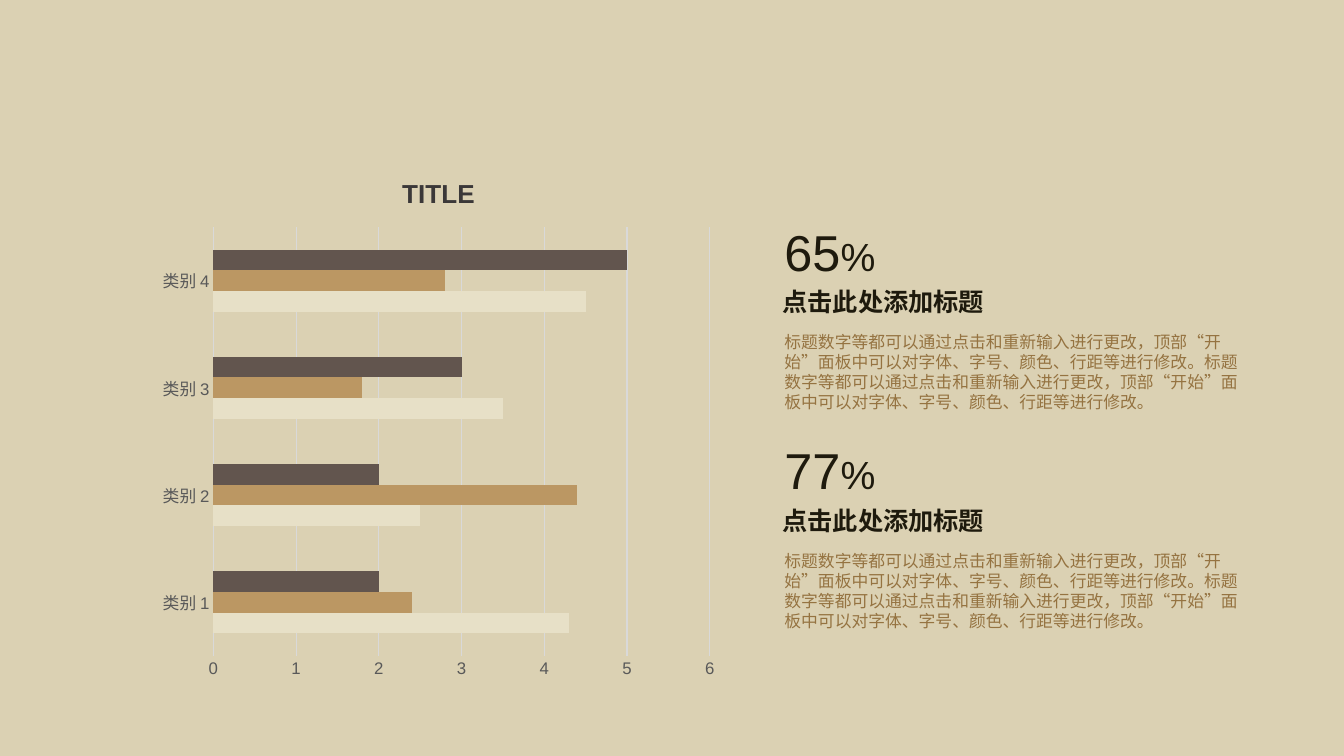
from pptx import Presentation
from pptx.chart.data import CategoryChartData
from pptx.dml.color import RGBColor
from pptx.enum.chart import XL_CHART_TYPE as ChartType, XL_TICK_MARK as TickMark
from pptx.enum.text import MSO_AUTO_SIZE as AutoSize
from pptx.oxml.ns import qn
from pptx.util import Inches, Pt

BACKGROUND, GRID, AXIS_TEXT = "DBD1B3", "D9D9D9", "595959"
CJK = "Noto Sans CJK SC"
NUMBER = {"name": "Arial", "size": Pt(36), "color": "1E1A0D"}
PERCENT = {**NUMBER, "size": Pt(28)}
HEADING = {"name": "Roboto", "size": Pt(18), "color": "1E1A0D", "bold": True}
BODY = {"name": CJK, "size": Pt(12), "color": "957341"}
AXIS = {"name": "Arial", "size": Pt(12), "color": AXIS_TEXT}
CHART_TITLE = {"name": "Arial", "size": Pt(18.6), "color": "3B3838", "bold": True}

CATEGORIES = ["类别 1", "类别 2", "类别 3", "类别 4"]
SERIES = [
    ("Series 1", (4.3, 2.5, 3.5, 4.5), "E7E0C7"),
    ("Series 2", (2.4, 4.4, 1.8, 2.8), "BB9763"),
    ("Series 3", (2, 2, 3, 5), "62554E"),
]
SENTENCE = ("标题数字等都可以通过点击和重新输入进行更改，"
            "顶部“开始”面板中可以对字体、字号、颜色、行距等进行修改。")


def paint(color_format, hex_color):
    color_format.rgb = RGBColor.from_string(hex_color)


def format_font(font, style):
    for attribute, value in style.items():
        if attribute == "color":
            paint(font.color, value)
        else:
            setattr(font, attribute, value)


def add_text(slide, left, top, width, height, runs):
    """Add a one-paragraph text box from (text, style) runs."""
    frame = slide.shapes.add_textbox(*map(Inches, (left, top, width, height))).text_frame
    settings = {
        "word_wrap": True, "auto_size": AutoSize.SHAPE_TO_FIT_TEXT,
        "margin_left": Inches(0.07), "margin_right": Inches(0.07),
        "margin_top": Inches(0.04), "margin_bottom": Inches(0.04),
    }
    for attribute, value in settings.items():
        setattr(frame, attribute, value)
    for text, style in runs:
        run = frame.paragraphs[0].add_run()
        run.text = text
        format_font(run.font, style)
        east_asian = run.font._element.makeelement(qn("a:ea"), {"typeface": CJK})
        run.font._element.find(qn("a:latin")).addnext(east_asian)


def add_bar_chart(slide, left, top, width, height):
    chart_data = CategoryChartData()
    chart_data.categories = CATEGORIES
    for name, values, _ in SERIES:
        chart_data.add_series(name, values)
    chart = slide.shapes.add_chart(
        ChartType.BAR_CLUSTERED, *map(Inches, (left, top, width, height)), chart_data).chart

    format_font(chart.font, {"name": "Arial", "size": Pt(10), "color": "000000"})
    chart.has_legend = False
    chart.has_title = True
    chart.chart_title.include_in_layout = False
    title_run = chart.chart_title.text_frame.paragraphs[0].add_run()
    title_run.text = "TITLE"
    format_font(title_run.font, CHART_TITLE)

    plot = chart.plots[0]
    plot.gap_width = 219
    plot.vary_by_categories = False
    for series, (_, _, color) in zip(plot.series, SERIES):
        series.format.fill.solid()
        paint(series.format.fill.fore_color, color)

    category_axis, value_axis = chart.category_axis, chart.value_axis
    for axis in (category_axis, value_axis):
        axis.major_tick_mark = axis.minor_tick_mark = TickMark.NONE
        format_font(axis.tick_labels.font, AXIS)
    category_axis.has_major_gridlines = False
    value_axis.has_major_gridlines = True
    value_axis.minimum_scale, value_axis.maximum_scale = 0, 6
    value_axis.major_unit = 1
    value_axis.format.line.fill.background()
    for line in (category_axis.format.line, value_axis.major_gridlines.format.line):
        paint(line.color, GRID)
        line.width = Pt(0.75)


def add_statistic(slide, left, top, width, number):
    """Stack a percentage, its heading and its description."""
    add_text(slide, left, top + 1.1, width, 0.88, [(SENTENCE * 2, BODY)])
    add_text(slide, left - 0.02, top + 0.65, 3.3, 0.68, [("点击此处添加标题", HEADING)])
    add_text(slide, left, top, 1.28, 0.68, [(number, NUMBER), ("%", PERCENT)])


def main():
    presentation = Presentation()
    presentation.slide_width, presentation.slide_height = Inches(13.33), Inches(7.5)
    slide = presentation.slides.add_slide(presentation.slide_layouts[6])
    slide.background.fill.solid()
    paint(slide.background.fill.fore_color, BACKGROUND)

    add_bar_chart(slide, 1.5, 1.54, 5.7, 5.29)
    for index, number in enumerate(("65", "77")):
        add_statistic(slide, 7.71, 2.15 + index * 2.17, 4.78, number)
    presentation.save("out.pptx")


if __name__ == "__main__":
    main()
